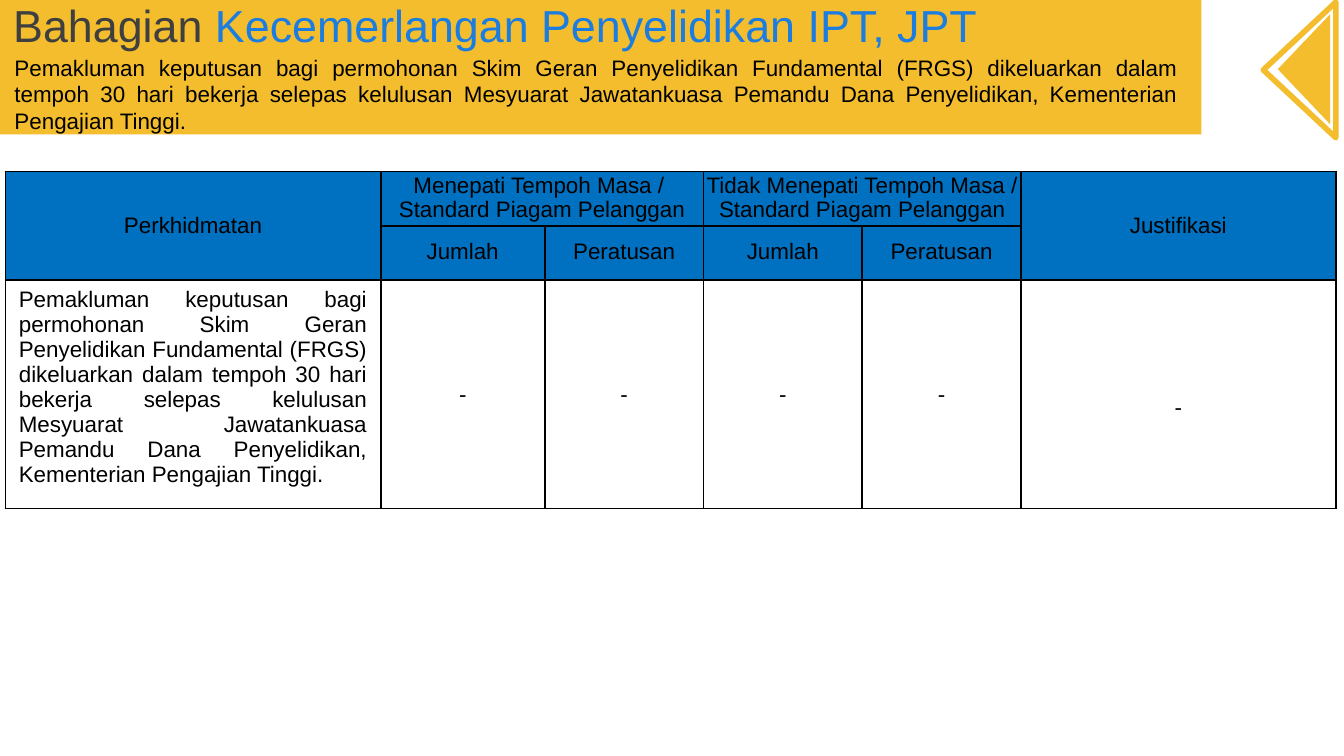
from lxml.etree import SubElement
from pptx import Presentation
from pptx.dml.color import RGBColor
from pptx.enum.shapes import MSO_SHAPE as SHAPE
from pptx.enum.text import MSO_ANCHOR as ANCHOR, PP_ALIGN as ALIGN
from pptx.oxml.ns import qn
from pptx.util import Inches, Pt

COLORS = {"gold": "F4BD2D", "blue": "0070C0", "title": "3F3F3F",
          "accent": "1C7DE1", "text": "000000", "white": "FFFFFF"}
FONT = "Arial"
UNIT = Inches(0.1)  # one column or row of the slide grid: 100 by 56.25

SERVICE = ("Pemakluman keputusan bagi permohonan Skim Geran Penyelidikan "
           "Fundamental (FRGS) dikeluarkan dalam tempoh 30 hari bekerja selepas "
           "kelulusan Mesyuarat Jawatankuasa Pemandu Dana Penyelidikan, "
           "Kementerian Pengajian Tinggi.")
TABLE_COLS = [27.9, 12.2, 11.8, 11.8, 11.8, 23.4]
TABLE_ROWS = [4.05, 4.05, 16]


def rgb(name):
    return RGBColor.from_string(COLORS[name])


def grid(*lengths):
    return [round(n * UNIT) for n in lengths]


def style(p, align, size=12, spacing=None):
    p.alignment, p.line_spacing = align, spacing
    p.font.name, p.font.size = FONT, Pt(size)
    p.font.color.rgb = rgb("text")


def add_text(s, box):
    tf = s.shapes.add_textbox(*grid(*box)).text_frame
    tf.word_wrap = True
    return tf


def add_header(s, box):
    """Gold band with a title line and a justified description."""
    x, y, w, h = box
    band = s.shapes.add_shape(SHAPE.RECTANGLE, *grid(*box))
    band.shadow.inherit = False
    band.fill.solid()
    band.fill.fore_color.rgb = rgb("gold")
    band.line.fill.background()

    # Description
    p = add_text(s, (x + 0.1, y + 0.35 * h, w - 0.8, 0.71 * h)).paragraphs[0]
    p.text = SERVICE
    style(p, ALIGN.JUSTIFY)

    # Two-colour title
    tf = add_text(s, (x, y - 0.11 * h, 0.86 * w, 0.59 * h))
    tf.vertical_anchor = ANCHOR.MIDDLE
    p = tf.paragraphs[0]
    style(p, ALIGN.LEFT, 24)
    for text, color in (("Bahagian ", "title"),
                        ("Kecemerlangan Penyelidikan IPT, JPT", "accent")):
        r = p.add_run()
        r.text = text
        r.font.color.rgb = rgb(color)


def add_triangle(s, box):
    """Triangle pointing left that fills the box once turned."""
    x, y, w, h = box
    sp = s.shapes.add_shape(
        SHAPE.ISOSCELES_TRIANGLE,
        *grid(x + (w - h) / 2, y + (h - w) / 2, h, w))
    sp.rotation = 270
    sp.shadow.inherit = False
    return sp


def add_back_arrow(s, box):
    """Solid triangle inside an outlined one."""
    x, y, w, h = box
    solid = add_triangle(s, (x + 0.2 * w, y + 0.09 * h, 0.72 * w, 0.81 * h))
    solid.fill.solid()
    solid.fill.fore_color.rgb = rgb("gold")
    solid.line.fill.background()

    outline = add_triangle(s, box)
    outline.fill.background()
    outline.line.color.rgb = rgb("gold")
    outline.line.width = Pt(3)


def set_borders(cell):
    tc_pr = cell._tc.get_or_add_tcPr()
    for i, side in enumerate(("lnL", "lnR", "lnT", "lnB")):
        ln = tc_pr.makeelement(qn(f"a:{side}"), {"w": str(Pt(1))})
        fill = SubElement(ln, qn("a:solidFill"))
        SubElement(fill, qn("a:srgbClr"), val=COLORS["text"])
        tc_pr.insert(i, ln)


def fill_cell(cell, text, align=ALIGN.CENTER, spacing=None, margins=(0, 0)):
    cell.vertical_anchor = ANCHOR.MIDDLE
    cell.margin_left = cell.margin_right = Inches(margins[0])
    cell.margin_top = cell.margin_bottom = Inches(margins[1])
    cell.text = text
    for p in cell.text_frame.paragraphs:
        style(p, align, spacing=spacing)


def add_table(s, box):
    """Service table with a two-row header and one record."""
    x, y, w, h = box
    frame = s.shapes.add_table(len(TABLE_ROWS), len(TABLE_COLS), *grid(*box))
    table = frame.table
    for column, share in zip(table.columns, TABLE_COLS):
        column.width = round(w * UNIT * share / sum(TABLE_COLS))
    for row, share in zip(table.rows, TABLE_ROWS):
        row.height = round(h * UNIT * share / sum(TABLE_ROWS))

    # Fills and borders
    for i in range(len(TABLE_ROWS)):
        for j in range(len(TABLE_COLS)):
            cell = table.cell(i, j)
            cell.fill.solid()
            cell.fill.fore_color.rgb = rgb("blue" if i < 2 else "white")
            set_borders(cell)

    # Header
    for j, text in ((0, "Perkhidmatan"), (5, "Justifikasi")):
        table.cell(0, j).merge(table.cell(1, j))
        fill_cell(table.cell(0, j), text)
    groups = ("Menepati Tempoh Masa / \nStandard Piagam Pelanggan",
              "Tidak Menepati Tempoh Masa / Standard Piagam Pelanggan")
    for j, text in zip((1, 3), groups):
        table.cell(0, j).merge(table.cell(0, j + 1))
        fill_cell(table.cell(0, j), text, spacing=0.96)
        for k, label in enumerate(("Jumlah", "Peratusan")):
            fill_cell(table.cell(1, j + k), label, spacing=0.88)

    # Record
    fill_cell(table.cell(2, 0), SERVICE, ALIGN.JUSTIFY, margins=(0.1, 0.05))
    table.cell(2, 0).vertical_anchor = ANCHOR.TOP
    for j in range(1, len(TABLE_COLS)):
        fill_cell(table.cell(2, j), "-", margins=(0.07, 0.05))
    table.cell(2, 5).margin_top = Inches(0.24)  # sits a little lower


def main():
    prs = Presentation()
    prs.slide_width, prs.slide_height = grid(100, 56.25)
    s = prs.slides.add_slide(prs.slide_layouts[6])
    add_header(s, (0, 0, 89.4, 10))
    add_back_arrow(s, (94, 0.15, 5.4, 10.1))
    add_table(s, (0.4, 12.75, 99, 24.1))
    prs.save("out.pptx")


if __name__ == "__main__":
    main()
